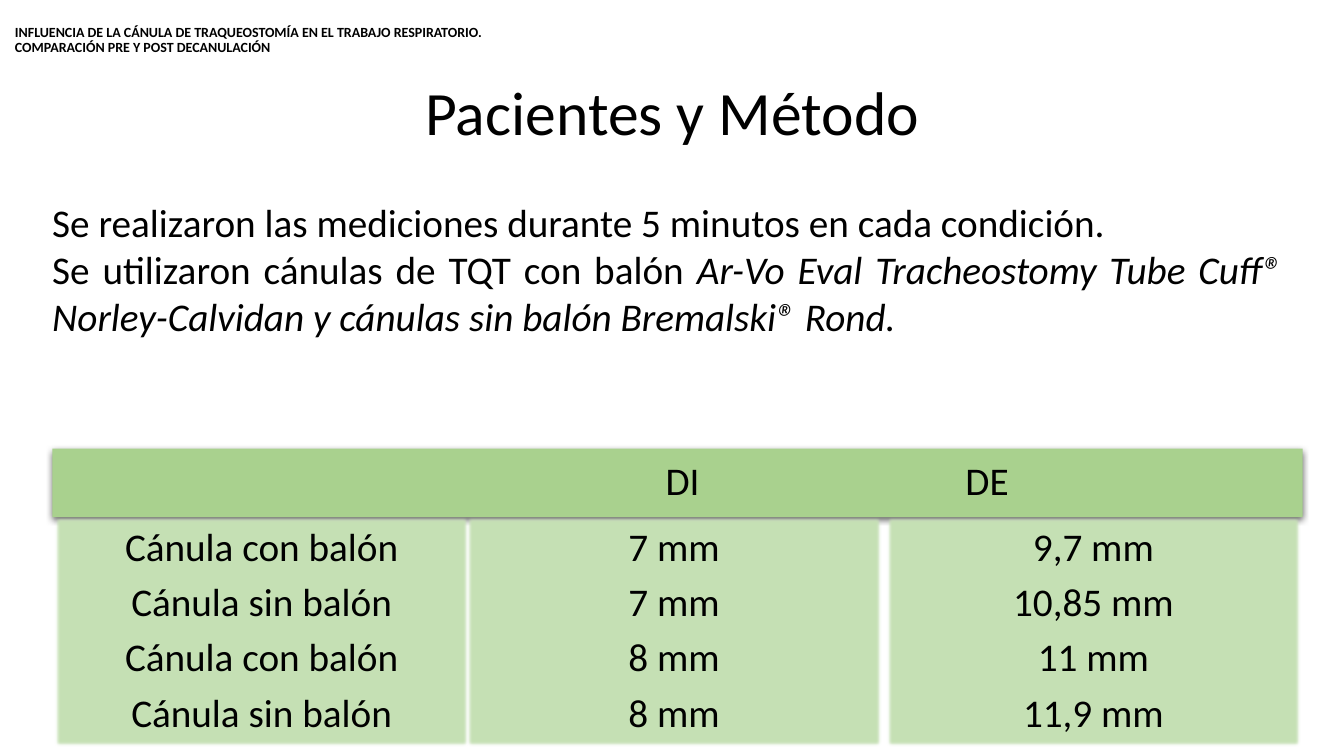
import pptx
import pptx.util
import pptx.dml.color
import pptx.enum.shapes
import pptx.enum.text
import pptx.oxml
import pptx.oxml.ns
from pptx.util import Inches

COLORS = {"text": "000000", "header": "A9D18E", "column": "C5E0B4"}
FONT = "Calibri"
ALIGN = pptx.enum.text.PP_ALIGN
ANCHOR = pptx.enum.text.MSO_ANCHOR
NAMESPACE = pptx.oxml.ns.nsdecls("a")

HEADER_SHADOW = (
    f'<a:outerShdw {NAMESPACE} blurRad="57150" dist="19050" dir="5400000" '
    'algn="ctr" rotWithShape="0"><a:srgbClr val="000000">'
    '<a:alpha val="63000"/></a:srgbClr></a:outerShdw>'
)
SOFT_EDGE = f'<a:softEdge {NAMESPACE} rad="31750"/>'

COLUMN_LEFTS = (0.53, 4.62, 8.78)
COLUMNS = (
    ("Cánula con balón", "Cánula sin balón") * 2,
    ("7 mm", "7 mm", "8 mm", "8 mm"),
    ("9,7 mm", "10,85 mm", "11 mm", "11,9 mm"),
)


def color(name):
    return pptx.dml.color.RGBColor.from_string(COLORS[name])


def format_text(text_frame, size, alignment, line_spacing=None, bold=False):
    for paragraph in text_frame.paragraphs:
        paragraph.alignment = alignment
        paragraph.line_spacing = line_spacing
        for run in paragraph.runs:
            run.font.name = FONT
            run.font.size = pptx.util.Pt(size)
            run.font.bold = bold
            run.font.color.rgb = color("text")


def add_text(slide, box, text, size, alignment, anchor=ANCHOR.MIDDLE, **style):
    text_frame = slide.shapes.add_textbox(*map(Inches, box)).text_frame
    text_frame.word_wrap = True
    text_frame.vertical_anchor = anchor
    text_frame.text = text
    format_text(text_frame, size, alignment, **style)
    return text_frame


def add_panel(slide, box, fill, effect, text, alignment=ALIGN.CENTER):
    shape = slide.shapes.add_shape(
        pptx.enum.shapes.MSO_SHAPE.RECTANGLE, *map(Inches, box)
    )
    shape.fill.solid()
    shape.fill.fore_color.rgb = color(fill)
    shape.line.fill.background()
    shape.shadow.inherit = False
    effects = shape._element.spPr.find(pptx.oxml.ns.qn("a:effectLst"))
    effects.append(pptx.oxml.parse_xml(effect))
    text_frame = shape.text_frame
    text_frame.word_wrap = True
    text_frame.vertical_anchor = ANCHOR.MIDDLE
    for side in ("left", "top", "right", "bottom"):
        setattr(text_frame, f"margin_{side}", Inches(0.12))
    text_frame.text = text
    format_text(text_frame, 28, alignment, line_spacing=0.9)
    for paragraph in text_frame.paragraphs:
        paragraph.space_after = pptx.util.Pt(9.25)
    return text_frame


def add_center_tabs(paragraph, positions):
    stops = "".join(
        f'<a:tab pos="{Inches(position)}" algn="ctr"/>' for position in positions
    )
    tab_list = pptx.oxml.parse_xml(f"<a:tabLst {NAMESPACE}>{stops}</a:tabLst>")
    paragraph._p.get_or_add_pPr().append(tab_list)


def add_body(slide):
    text_frame = add_text(
        slide,
        (0.42, 1.92, 12.4, 1.51),
        "Se realizaron las mediciones durante 5 minutos en cada condición.\n"
        "Se utilizaron cánulas de TQT con balón ",
        28,
        ALIGN.JUSTIFY,
        anchor=ANCHOR.TOP,
    )
    product_run = text_frame.paragraphs[1].add_run()
    product_run.text = (
        "Ar-Vo Eval Tracheostomy Tube Cuff® "
        "Norley-Calvidan y cánulas sin balón Bremalski® Rond."
    )
    format_text(text_frame, 28, ALIGN.JUSTIFY)
    product_run.font.italic = True


def add_cannula_panels(slide):
    header = add_panel(
        slide, (0.52, 4.45, 12.4, 0.68), "header", HEADER_SHADOW,
        "\tDI\tDE", ALIGN.LEFT,
    )
    add_center_tabs(header.paragraphs[0], (6.13, 9.15))
    for left, values in zip(COLUMN_LEFTS, COLUMNS):
        add_panel(
            slide, (left, 5.11, 4.13, 2.31), "column", SOFT_EDGE, "\n".join(values)
        )


def main():
    presentation = pptx.Presentation()
    presentation.slide_width = Inches(13.33)
    presentation.slide_height = Inches(7.5)
    slide = presentation.slides.add_slide(presentation.slide_layouts[6])
    add_text(
        slide,
        (0.05, -0.03, 7.35, 0.86),
        "INFLUENCIA DE LA CÁNULA DE TRAQUEOSTOMÍA EN EL TRABAJO RESPIRATORIO.\v"
        "COMPARACIÓN PRE Y POST DECANULACIÓN",
        10,
        ALIGN.LEFT,
        line_spacing=0.9,
        bold=True,
    )
    add_body(slide)
    add_cannula_panels(slide)
    add_text(slide, (0.67, 0.47, 12, 1.25), "Pacientes y Método", 44, ALIGN.CENTER)
    presentation.save("out.pptx")


if __name__ == "__main__":
    main()
